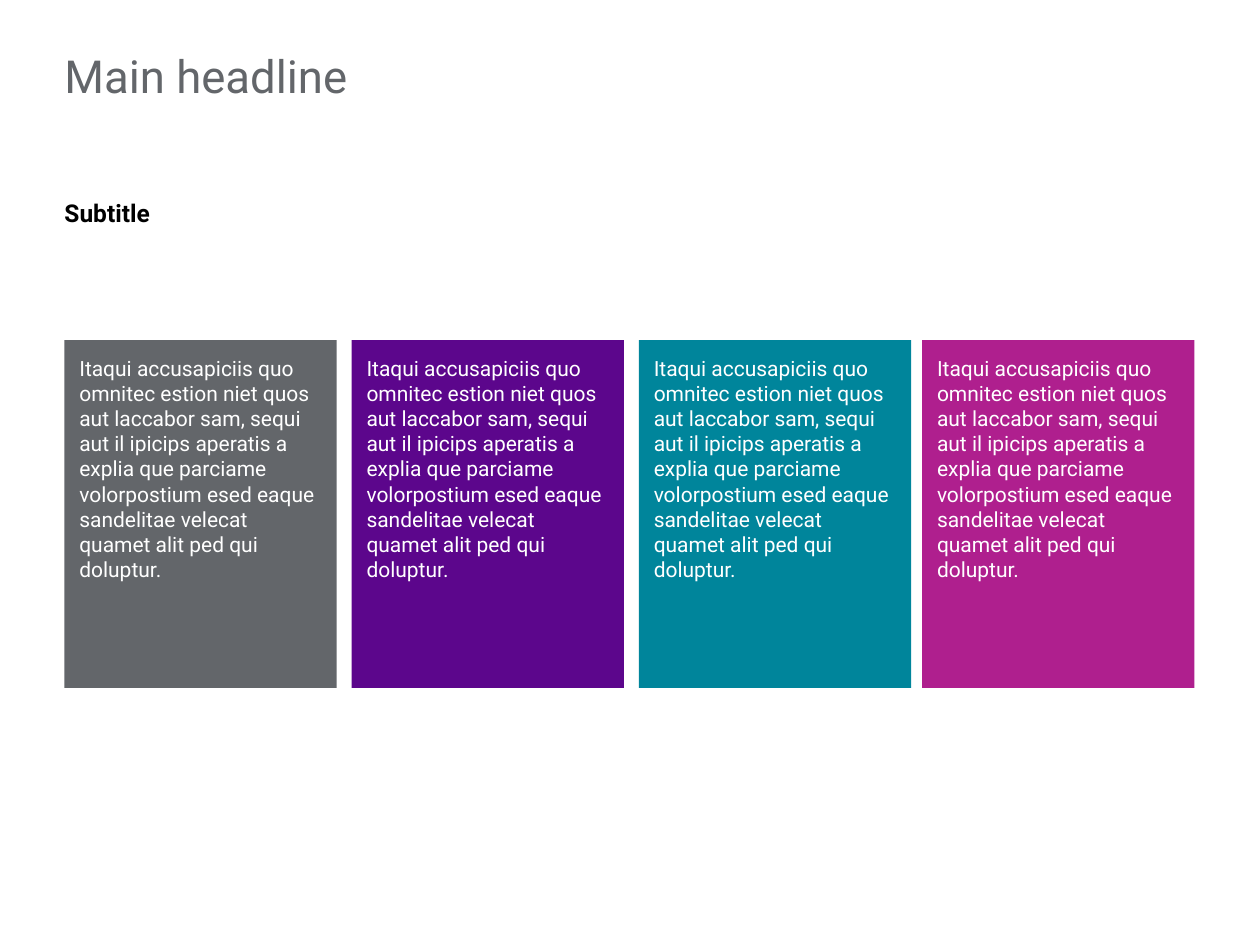
from dataclasses import dataclass

from pptx import Presentation
from pptx import util as u
from pptx.dml.color import RGBColor
from pptx.enum import shapes, text

FONT = "Roboto"
BODY = (
    "Itaqui accusapiciis quo omnitec estion niet quos aut laccabor sam, "
    "sequi aut il ipicips aperatis a explia que parciame volorpostium esed "
    "eaque sandelitae velecat quamet alit ped qui doluptur."
)
MARGIN = 1.3
HEAD_W = 16.69
CARD_TOP, CARD_W, CARD_H = 6.86, 5.49, 7.01
CARD_INSET = 0.3


@dataclass
class Label:
    words: str
    size: float
    color: str
    bold: bool = False
    inset: float = 0
    para: dict | None = None


@dataclass
class Card:
    left: float
    fill: str


CARDS = [
    Card(1.3, "63666A"),
    Card(7.09, "5C068C"),
    Card(12.88, "00859B"),
    Card(18.59, "AF1F8E"),
]


def rgb(value: str) -> RGBColor:
    return RGBColor.from_string(value)


def set_all(obj, values: dict) -> None:
    for name, value in values.items():
        setattr(obj, name, value)


def write(sp, label: Label) -> None:
    tf = sp.text_frame
    inset = u.Cm(label.inset)
    set_all(tf, {
        "word_wrap": True,
        "vertical_anchor": text.MSO_ANCHOR.TOP,
        "margin_left": inset,
        "margin_top": inset,
        "margin_right": inset,
        "margin_bottom": inset,
    })
    p = tf.paragraphs[0]
    set_all(p, {"alignment": text.PP_ALIGN.LEFT, **(label.para or {})})
    r = p.add_run()
    r.text = label.words
    set_all(r.font, {"name": FONT, "size": u.Pt(label.size), "bold": label.bold})
    r.font.color.rgb = rgb(label.color)


def add_heading(s, top: float, height: float, label: Label) -> None:
    sp = s.shapes.add_textbox(u.Cm(MARGIN), u.Cm(top), u.Cm(HEAD_W), u.Cm(height))
    write(sp, label)


def add_card(s, card: Card, label: Label) -> None:
    sp = s.shapes.add_shape(
        shapes.MSO_SHAPE.RECTANGLE,
        u.Cm(card.left), u.Cm(CARD_TOP), u.Cm(CARD_W), u.Cm(CARD_H),
    )
    sp.shadow.inherit = False
    sp.fill.solid()
    sp.fill.fore_color.rgb = rgb(card.fill)
    sp.line.fill.background()
    write(sp, label)


def main() -> None:
    prs = Presentation()
    set_all(prs, {"slide_width": u.Cm(25.4), "slide_height": u.Cm(19.05)})
    s = prs.slides.add_slide(prs.slide_layouts[6])
    spaced = {"space_after": u.Pt(7)}
    add_heading(s, 1.09, 2.01, Label("Main headline", 26, "63666A", para={"line_spacing": 0.9}))
    add_heading(s, 3.99, 1.19, Label("Subtitle", 14, "000000", bold=True, para=spaced))
    body = Label(BODY, 12, "FFFFFF", inset=CARD_INSET, para=spaced)
    for card in CARDS:
        add_card(s, card, body)
    prs.save("out.pptx")


if __name__ == "__main__":
    main()
